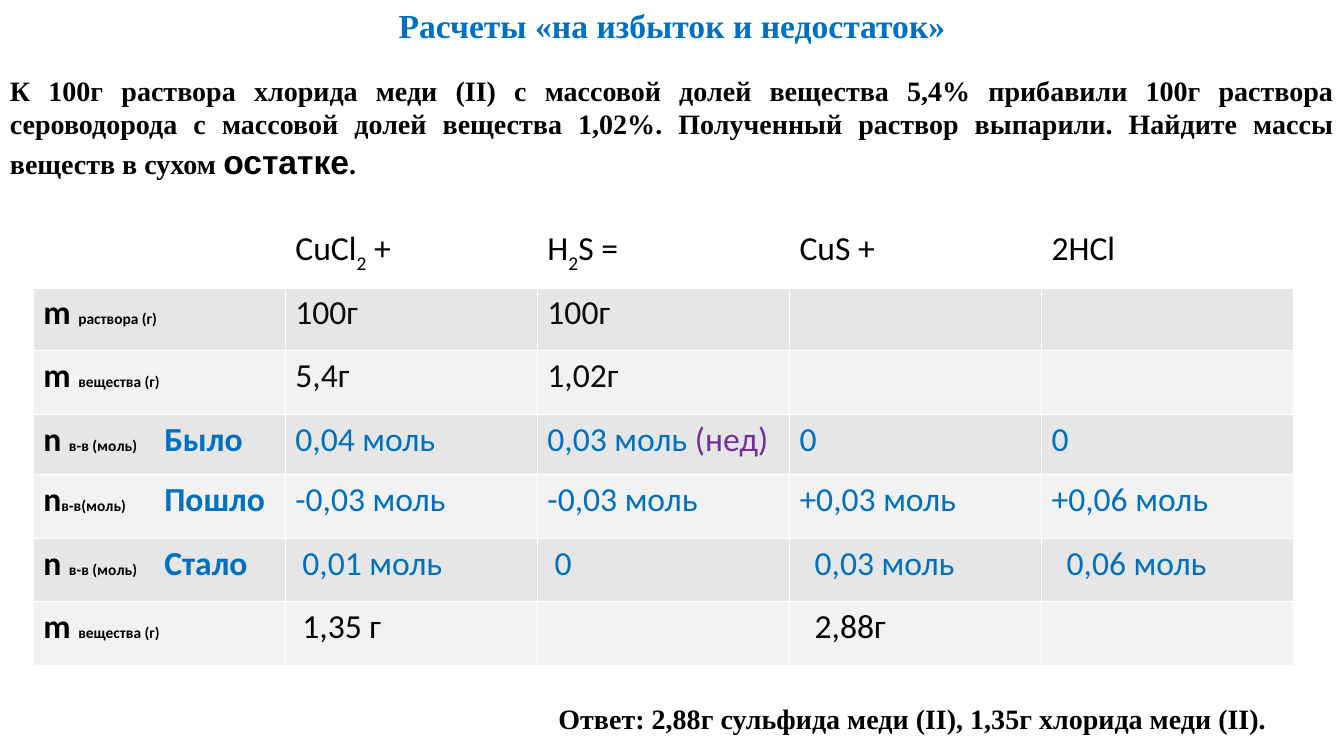
from pptx import Presentation
from pptx.dml.color import RGBColor
from pptx.enum import text as t
from pptx.oxml import parse_xml
from pptx.oxml.ns import nsdecls
from pptx.util import Inches, Pt

BLUE = "0070C0"
DARK = "0D0D0D"
SERIF = "Times New Roman"
ALIGN = {"c": t.PP_ALIGN.CENTER, "j": t.PP_ALIGN.JUSTIFY, "l": t.PP_ALIGN.LEFT}


def color(code):
    return RGBColor.from_string(code)


def write(para, words, size=24, font="Calibri", ink="000000", bold=False, base=0):
    run = para.add_run()
    run.text = words
    run.font.size = Pt(size)
    run.font.name = font
    run.font.bold = bold
    run.font.color.rgb = color(ink)
    if base:
        run._r.get_or_add_rPr().set("baseline", str(base * 1000))


def box(slide, left, top, width, height):
    frame = slide.shapes.add_textbox(
        Inches(left), Inches(top), Inches(width), Inches(height)).text_frame
    frame.word_wrap = True
    return frame


def border(cell, side, width):
    cell._tc.get_or_add_tcPr().append(parse_xml(
        f'<a:ln{side} {nsdecls("a")} w="{Pt(width)}"><a:solidFill>'
        f'<a:srgbClr val="FFFFFF"/></a:solidFill></a:ln{side}>'))


def style(cell, fill, bottom):
    for side, width in (("L", 1), ("R", 1), ("T", 1), ("B", bottom)):
        border(cell, side, width)
    cell.fill.solid()
    cell.fill.fore_color.rgb = color(fill)


def tab(para, place):
    para._p.get_or_add_pPr().append(parse_xml(
        f'<a:tabLst {nsdecls("a")}><a:tab pos="{Inches(place)}" algn="l"/></a:tabLst>'))


def formula(cell, parts):
    para = cell.text_frame.paragraphs[0]
    para.alignment = ALIGN["j"]
    for index, part in enumerate(parts):
        write(para, part, base=-30 if index % 2 else 0)


def label(cell, sign, unit, stage):
    para = cell.text_frame.paragraphs[0]
    para.alignment = ALIGN["l"]
    write(para, sign, bold=True)
    write(para, unit, size=11, bold=True)
    if stage:
        tab(para, 1.2)
        write(para, "\t" + stage, ink=BLUE, bold=True)


def value(cell, words, ink, inset):
    cell.margin_left = Inches(0.1 + inset)
    para = cell.text_frame.paragraphs[0]
    para.alignment = ALIGN["j"]
    main, mark, note = words.partition("(")
    write(para, main, ink=ink)
    if mark:
        write(para, mark + note, ink="7030A0")


def balance(slide):
    heads = [[], ["CuCl", "2", " +"], ["H", "2", "S ="], ["CuS +"], ["2HCl"]]
    flat = (0, 0, 0, 0)
    shift = (0.07, 0.07, 0.15, 0.15)
    rows = [
        (("m ", "раствора (г)", ""), ("100г", "100г", "", ""), DARK, flat),
        (("m ", "вещества (г)", ""), ("5,4г", "1,02г", "", ""), DARK, flat),
        (("n ", "в-в (моль)", "Было"),
         ("0,04 моль", "0,03 моль (нед)", "0", "0"), BLUE, flat),
        (("n", "в-в(моль)", "Пошло"),
         ("-0,03 моль", "-0,03 моль", "+0,03 моль", "+0,06 моль"), BLUE, flat),
        (("n ", "в-в (моль)", "Cтало"),
         ("0,01 моль", "0", "0,03 моль", "0,06 моль"), BLUE, shift),
        (("m ", "вещества (г)", ""), ("1,35 г", "", "2,88г", ""), "000000", shift),
    ]
    table = slide.shapes.add_table(
        7, 5, Inches(0.33), Inches(2.22), Inches(12.5), Inches(4.36)).table
    for col in table.columns:
        col.width = Inches(2.5)
    for num, row in enumerate(table.rows):
        row.height = Inches(0.6 if num == 3 else 0.63)
        fill = ("E7E6E6" if num % 2 else "F2F2F2") if num else "FFFFFF"
        for cell in row.cells:
            style(cell, fill, 1 if num else 3)
    for col, parts in enumerate(heads):
        formula(table.cell(0, col), parts)
    for num, (name, values, ink, insets) in enumerate(rows, 1):
        label(table.cell(num, 0), *name)
        for col, (words, inset) in enumerate(zip(values, insets), 1):
            if words:
                value(table.cell(num, col), words, ink, inset)


def task(slide):
    frame = box(slide, 0, 0, 13.33, 1.85)
    title = frame.paragraphs[0]
    title.alignment = ALIGN["c"]
    title.space_after = Pt(20)
    write(title, "Расчеты «на избыток и недостаток»", font=SERIF, ink=BLUE, bold=True)
    para = frame.add_paragraph()
    para.alignment = ALIGN["j"]
    write(para, "К 100г раствора хлорида меди (II) с массовой долей вещества 5,4% "
          "прибавили 100г раствора сероводорода с массовой долей вещества 1,02%. "
          "Полученный раствор выпарили. Найдите массы веществ в сухом ",
          size=20, font=SERIF, bold=True)
    write(para, "остатке", font="Arial", bold=True)
    write(para, ".", size=20, font=SERIF, bold=True)


def answer(slide):
    para = box(slide, 4.95, 6.91, 8.38, 0.5).paragraphs[0]
    para.alignment = ALIGN["j"]
    para._p.get_or_add_pPr().set("indent", str(Inches(0.49)))
    write(para, "Ответ: 2,88г сульфида меди (II), 1,35г хлорида меди (II).",
          size=20, font=SERIF, bold=True)


def main():
    deck = Presentation()
    deck.slide_width = Inches(13.33)
    deck.slide_height = Inches(7.5)
    slide = deck.slides.add_slide(deck.slide_layouts[6])
    task(slide)
    balance(slide)
    answer(slide)
    deck.save("out.pptx")


if __name__ == "__main__":
    main()
